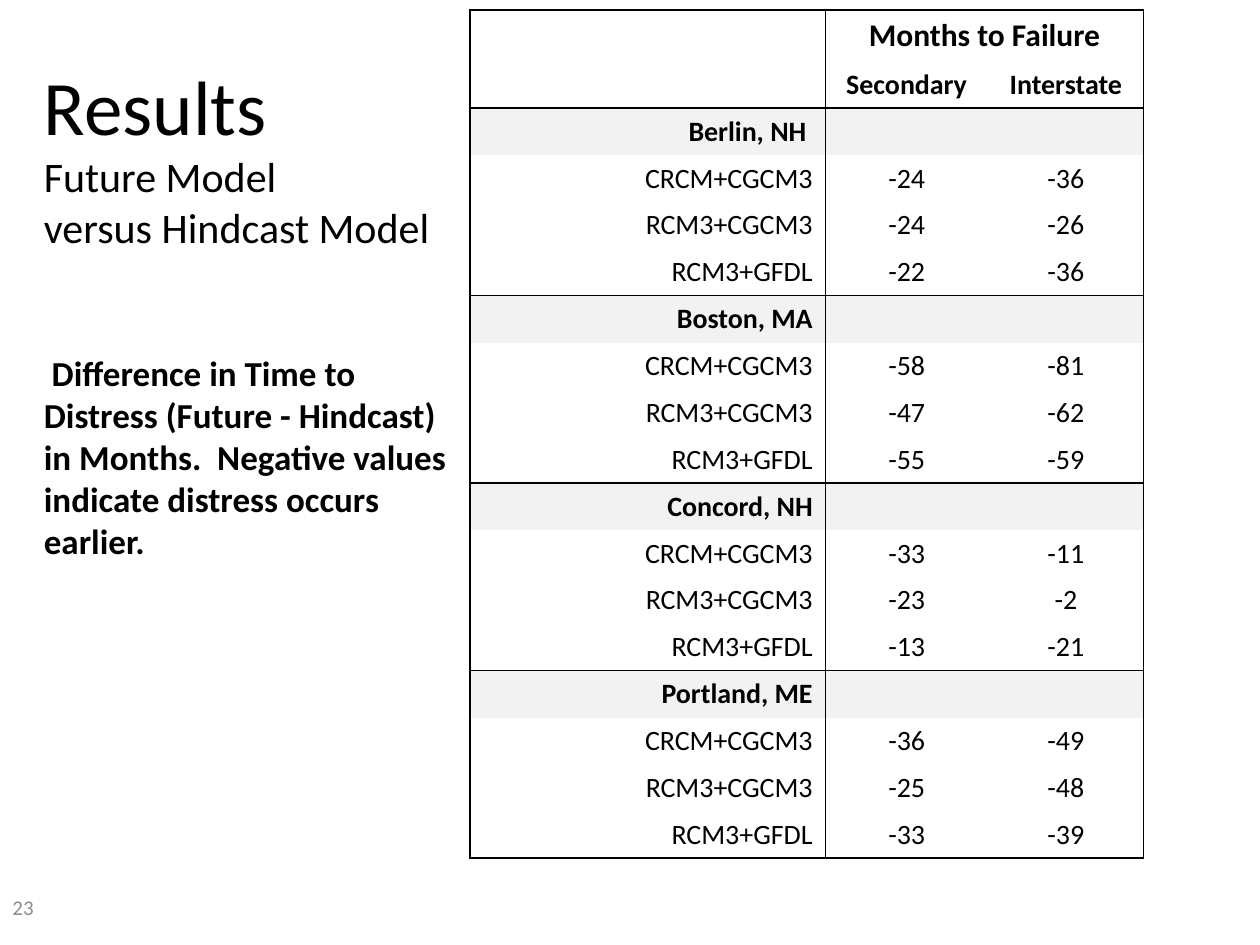
"""Build the results slide: months to failure by city and climate model."""
from lxml import etree
from pptx import Presentation
from pptx.dml.color import RGBColor
from pptx.enum.text import MSO_ANCHOR, PP_ALIGN
from pptx.oxml.ns import qn
from pptx.util import Pt

LEFT, CENTER, RIGHT = PP_ALIGN.LEFT, PP_ALIGN.CENTER, PP_ALIGN.RIGHT
MIDDLE = MSO_ANCHOR.MIDDLE
BLACK = RGBColor(0x00, 0x00, 0x00)
GRAY = RGBColor(0x8C, 0x8C, 0x8C)
BAND = RGBColor(0xF2, 0xF2, 0xF2)
FONT = "Calibri"

PAGE_NUMBER = "23"
HEADING = [
    ("Results", 44, False, 0),
    ("Future Model", 24, False, 0),
    ("versus Hindcast Model", 24, False, 0),
    (" Difference in Time to Distress (Future - Hindcast) in Months.  "
     "Negative values indicate distress occurs earlier.", 20, True, 57),
]
HEADER = [("", "Months to Failure", ""), ("", "Secondary", "Interstate")]
MODELS = ["CRCM+CGCM3", "RCM3+CGCM3", "RCM3+GFDL"]
CITIES = {
    "Berlin, NH ": [(-24, -36), (-24, -26), (-22, -36)],
    "Boston, MA": [(-58, -81), (-47, -62), (-55, -59)],
    "Concord, NH": [(-33, -11), (-23, -2), (-13, -21)],
    "Portland, ME": [(-36, -49), (-25, -48), (-33, -39)],
}
COLUMN_WIDTHS = [203, 93, 89]
TOP_ROW_HEIGHT, ROW_HEIGHT = 29.2, 26.8
TABLE_LEFT, TABLE_TOP = 268.6, 5.8


def write(paragraph, text, size, bold=False, color=BLACK, align=LEFT):
    paragraph.alignment = align
    run = paragraph.add_run()
    run.text = text
    run.font.name = FONT
    run.font.size = Pt(size)
    run.font.bold = bold
    run.font.color.rgb = color


def add_text_frame(slide, left, top, width, height):
    frame = slide.shapes.add_textbox(Pt(left), Pt(top), Pt(width), Pt(height)).text_frame
    frame.word_wrap = True
    frame.vertical_anchor = MIDDLE
    return frame


def set_borders(cell, sides):
    properties = cell._tc.get_or_add_tcPr()
    for position, side in enumerate("LRTB"):
        line = etree.Element(qn(f"a:ln{side}"), w=str(Pt(1)))
        if side in sides:
            fill = etree.SubElement(line, qn("a:solidFill"))
            etree.SubElement(fill, qn("a:srgbClr"), val=str(BLACK))
        else:
            etree.SubElement(line, qn("a:noFill"))
        properties.insert(position, line)


def table_blocks():
    yield HEADER
    for city, differences in CITIES.items():
        yield [(city, "", "")] + [
            (model, str(secondary), str(interstate))
            for model, (secondary, interstate) in zip(MODELS, differences)
        ]


def fill_cell(cell, text, size, bold, banded, align, sides):
    cell.vertical_anchor = MIDDLE
    if banded:
        cell.fill.solid()
        cell.fill.fore_color.rgb = BAND
    else:
        cell.fill.background()
    set_borders(cell, sides)
    paragraph = cell.text_frame.paragraphs[0]
    if text:
        write(paragraph, text, size, bold, BLACK, align)
    else:
        paragraph._p.get_or_add_endParaRPr().set("sz", str(size * 100))


def add_results_table(slide):
    blocks = list(table_blocks())
    row_count = sum(len(block) for block in blocks)
    table = slide.shapes.add_table(
        row_count, len(COLUMN_WIDTHS), Pt(TABLE_LEFT), Pt(TABLE_TOP),
        Pt(sum(COLUMN_WIDTHS)), Pt(TOP_ROW_HEIGHT + (row_count - 1) * ROW_HEIGHT),
    ).table
    table.first_row = table.horz_banding = False
    for column, width in zip(table.columns, COLUMN_WIDTHS):
        column.width = Pt(width)
    row = 0
    for block in blocks:
        is_header = block is HEADER
        for line, texts in enumerate(block):
            is_top = row == 0
            table.rows[row].height = Pt(TOP_ROW_HEIGHT if is_top else ROW_HEIGHT)
            ends = ("T" if line == 0 else "") + ("B" if line == len(block) - 1 else "")
            for column, text in enumerate(texts):
                sides = ("LR", "LR" if is_top else "L", "R")[column] + ends
                fill_cell(
                    table.cell(row, column), text, 18 if is_top else 16,
                    is_header or line == 0, line == 0 and not is_header,
                    RIGHT if column == 0 else CENTER, sides,
                )
            row += 1
    table.cell(0, 1).merge(table.cell(0, 2))


def main():
    deck = Presentation()
    deck.slide_width, deck.slide_height = Pt(720), Pt(540)
    slide = deck.slides.add_slide(deck.slide_layouts[6])

    number = add_text_frame(slide, 0, 504, 168, 28.8)
    write(number.paragraphs[0], PAGE_NUMBER, 12, color=GRAY)
    add_results_table(slide)

    heading = add_text_frame(slide, 18, 132, 246, 90)
    for index, (text, size, bold, space) in enumerate(HEADING):
        paragraph = heading.add_paragraph() if index else heading.paragraphs[0]
        if space:
            paragraph.space_before = Pt(space)
        write(paragraph, text, size, bold)

    deck.save("out.pptx")


if __name__ == "__main__":
    main()
